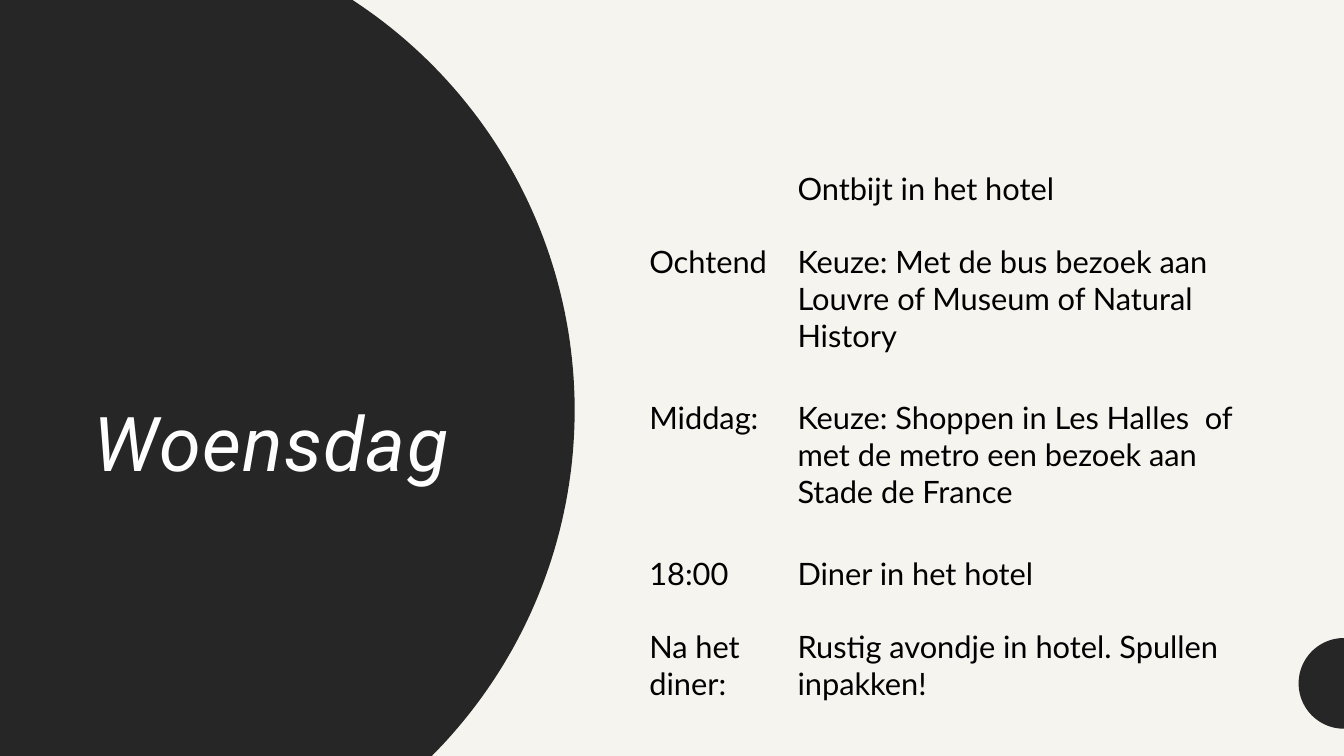
from math import asin, cos, degrees, radians, sin
from pptx import Presentation
from pptx.dml.color import RGBColor
from pptx.enum import text as t
from pptx.util import Inches, Pt

DARK = RGBColor(0x26, 0x26, 0x26)
CREAM = RGBColor(0xF6, 0xF4, 0xEF)
WHITE = RGBColor(0xFF, 0xFF, 0xFF)
BLACK = RGBColor(0, 0, 0)
WIDE, HIGH = 13.33, 7.5
NO_GRID = "{2D5ABB26-0587-4C30-8999-92F81FD0307C}"

deck = Presentation()
deck.slide_width, deck.slide_height = Inches(WIDE), Inches(HIGH)
slide = deck.slides.add_slide(deck.slide_layouts[5])
slide.background.fill.solid()
slide.background.fill.fore_color.rgb = CREAM


def write(frame, words, font="Lato", size=22, color=BLACK, italic=False,
          space=None, line=None, anchor=None):
    frame.word_wrap = True
    if anchor is not None:
        frame.vertical_anchor = anchor
    para = frame.paragraphs[0]
    para.alignment = t.PP_ALIGN.LEFT
    para.line_spacing = line
    run = para.add_run()
    run.text = words
    run.font.name, run.font.size = font, Pt(size)
    run.font.color.rgb, run.font.italic = color, italic
    if space:
        run._r.get_or_add_rPr().set("spc", str(space * 100))


def disc(x, y, r, start, end, corners=()):
    """Dark part of a circle between two angles, closed through corners."""
    steps = 90
    turns = [radians(start + (end - start) * i / steps) for i in range(steps + 1)]
    points = [(x + r * cos(a), y + r * sin(a)) for a in turns] + list(corners)
    points = [(Inches(px), Inches(py)) for px, py in points]
    pen = slide.shapes.build_freeform(*points[0])
    pen.add_line_segments(points[1:], close=True)
    shape = pen.convert_to_shape()
    shape.shadow.inherit = False
    shape.fill.solid()
    shape.fill.fore_color.rgb = DARK
    shape.line.fill.background()
    return shape


# Large disc cut by the left, top and bottom edges, small one by the right
mid, rad = 4.07, 4.86
big = disc(0.84, mid, rad, degrees(asin(-mid / rad)),
           degrees(asin((HIGH - mid) / rad)), [(0, HIGH), (0, 0)])
disc(WIDE, 6.78, 0.45, 90, 270)

# Title, in front of the large disc
title = slide.shapes.title
title.left, title.top = Inches(0.83), Inches(1.23)
title.width, title.height = Inches(3.77), Inches(3.66)
write(title.text_frame, "Woensdag", font="Roboto", size=54, color=WHITE,
      italic=True, space=1, line=0.9, anchor=t.MSO_ANCHOR.BOTTOM)
big._element.addnext(title._element)

# Day programme: row height, moment, activity
plan = [
    (0.72, "", "Ontbijt in het hotel"),
    (1.55, "Ochtend", "Keuze: Met de bus bezoek aan Louvre of Museum of Natural History"),
    (1.55, "Middag:", "Keuze: Shoppen in Les Halles  of met de metro een bezoek aan Stade de France"),
    (0.72, "18:00", "Diner in het hotel"),
    (0.79, "Na het diner:", "Rustig avondje in hotel. Spullen inpakken!"),
]
frame = slide.shapes.add_table(len(plan), 2, Inches(6.34), Inches(1.64),
                               Inches(6.17), Inches(5.33))
table = frame.table
table.first_row = table.horz_banding = False
table._tbl.tblPr.find("{*}tableStyleId").text = NO_GRID
for col, width in zip(table.columns, (1.47, 4.7)):
    col.width = Inches(width)
for row, (height, *words) in zip(table.rows, plan):
    row.height = Inches(height)
    for cell, word in zip(row.cells, words):
        cell.fill.background()
        if word:
            write(cell.text_frame, word)

deck.save("out.pptx")
